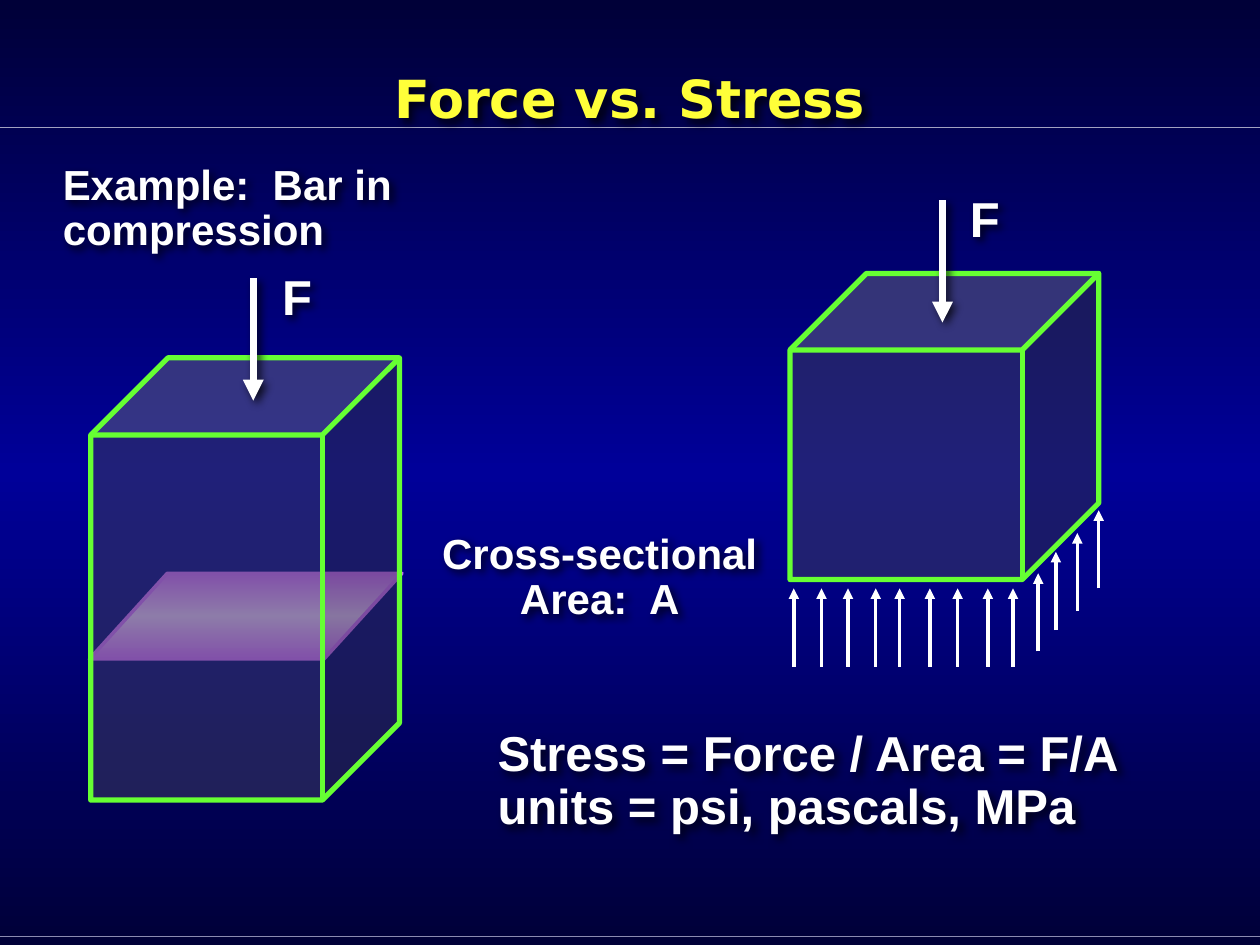
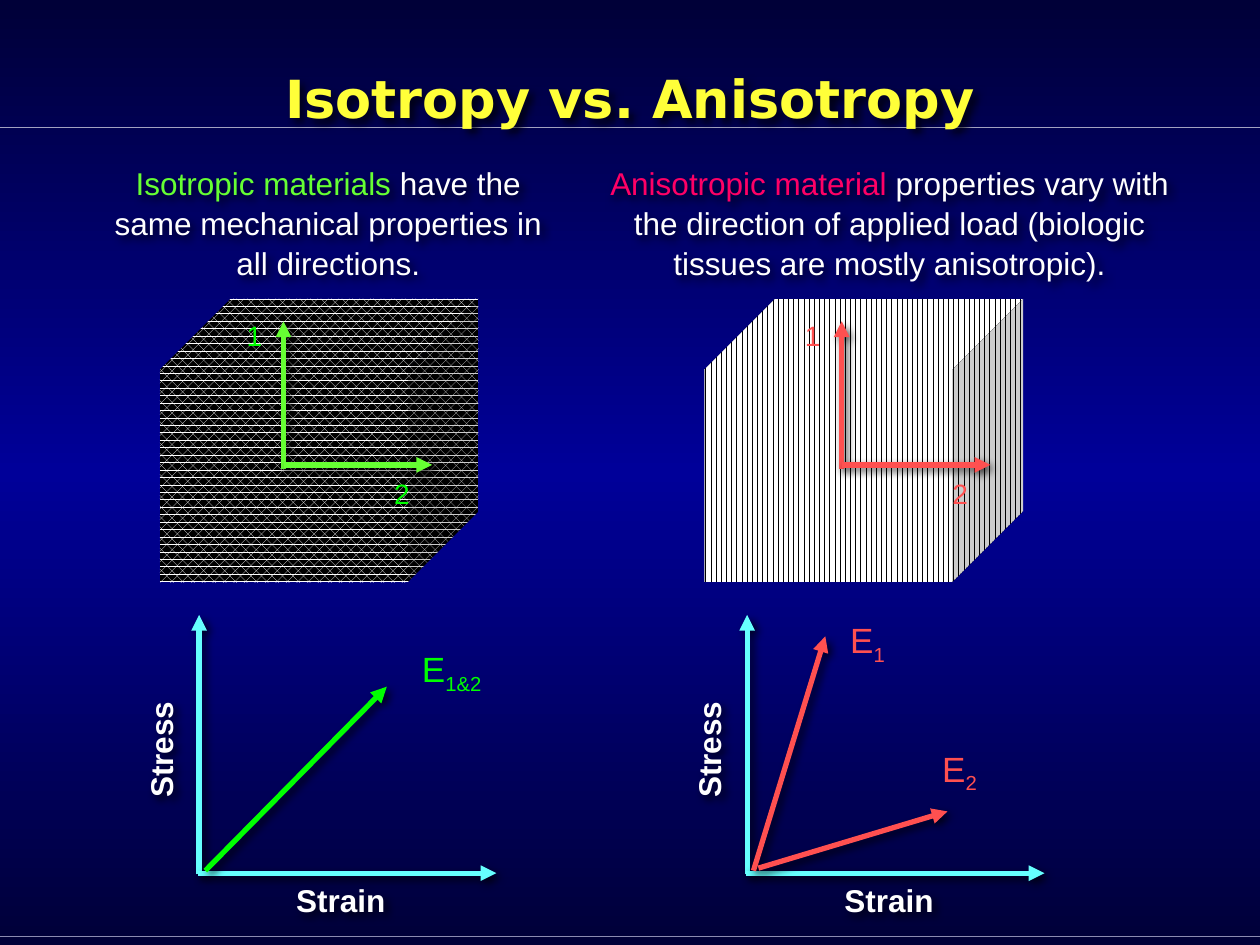
from lxml import etree
from pptx import Presentation
from pptx.dml import color
from pptx.enum import dml, shapes, text
from pptx.oxml import ns, parse_xml
from pptx.util import Inches, Pt

HUES = {
    "edge": "000038", "mid": "000099", "low": "8B8BB1", "rule": "A2A2C0",
    "title": "FFFF39", "white": "FFFFFF", "black": "000000",
    "glass": "3E3E5C", "lime": "66FF33", "green": "00FF00", "cyan": "66FFFF",
    "red": "FF5050", "pink": "FF0066", "plum": "CC66FF", "pale": "E5C0FF",
}
FONT, HEAD = "Arial", "DejaVu Sans"
SHAPE = shapes.MSO_SHAPE
LEFT, MID = text.PP_ALIGN.LEFT, text.PP_ALIGN.CENTER


def rgb(name):
    return color.RGBColor.from_string(HUES[name])


def node(parent, tag, **attrs):
    return etree.SubElement(parent, ns.qn(tag), attrs)


def blend(root, stops):
    """Replace the stops of the gradient under root and return the gradient."""
    grad = root.find(".//" + ns.qn("a:gradFill"))
    items = grad.find(ns.qn("a:gsLst"))
    for old in list(items):
        items.remove(old)
    for pos, name in stops:
        stop = node(items, "a:gs", pos=str(pos * 1000))
        node(stop, "a:srgbClr", val=HUES[name])
    return grad


def shade(item, on=True):
    """Give a shape the deck's soft shadow, or an empty effect list."""
    props = item.element.spPr
    for old in props.findall(ns.qn("a:effectLst")):
        props.remove(old)
    effects = node(props, "a:effectLst")
    if on:
        drop = node(effects, "a:outerShdw", blurRad=str(Pt(5)), dist=str(Pt(3)),
                    dir="2700000", algn="ctr", rotWithShape="0")
        ink = node(drop, "a:srgbClr", val=HUES["black"])
        node(ink, "a:alpha", val="75000")


class Deck:
    """Holds the shared style and the current slide."""

    def __init__(self):
        self.file = Presentation()
        self.file.slide_width, self.file.slide_height = Inches(10), Inches(7.5)
        master = self.file.slide_master
        fill = master.background.fill
        fill.gradient()
        fill.gradient_angle = 270
        blend(master.element, [(0, "edge"), (50, "mid"), (100, "edge")])

    def page(self, title):
        self.slide = self.file.slides.add_slide(self.file.slide_layouts[5])
        self.items = self.slide.shapes
        for y, hue in ((1.01, "rule"), (7.43, "low")):
            band = self.line((0, y), (10, y), hue, 0.75)
            self.items.element.insert(2, band.element)
        head = self.items.title
        head.left, head.top = Inches(0.5), Inches(0.15)
        head.width, head.height = Inches(9), Inches(1.25)
        frame = head.text_frame
        frame.text = title
        frame.vertical_anchor = text.MSO_ANCHOR.MIDDLE
        frame.auto_size = text.MSO_AUTO_SIZE.NONE
        frame.paragraphs[0].alignment = MID
        self.style(frame.paragraphs[0].runs[0], 30, "title", True, HEAD)
        shade(head)

    def style(self, run, size, hue, bold=False, face=FONT):
        font = run.font
        font.name, font.size, font.bold = face, Pt(size), bold
        font.color.rgb = rgb(hue)

    def line(self, start, end, hue, width):
        ends = [Inches(v) for v in (*start, *end)]
        item = self.items.add_connector(shapes.MSO_CONNECTOR.STRAIGHT, *ends)
        item.line.color.rgb = rgb(hue)
        item.line.width = Pt(width)
        shade(item, False)
        return item

    def arrow(self, start, end, hue, width=3, shadow=True):
        item = self.line(start, end, hue, width)
        node(item.line._get_or_add_ln(), "a:tailEnd", type="triangle")
        shade(item, shadow)

    def text(self, at, lines, size, bold=False, align=MID, gap=1.0,
             wrap=False, shadow=True, turn=0):
        """Each line is a list of (words, hue) or (words, hue, baseline)."""
        box = self.items.add_textbox(*[Inches(v) for v in at])
        box.rotation = turn
        frame = box.text_frame
        frame.word_wrap = wrap
        for i, parts in enumerate(lines):
            para = frame.add_paragraph() if i else frame.paragraphs[0]
            para.alignment, para.line_spacing = align, gap
            for words, hue, *base in parts:
                run = para.add_run()
                run.text = words
                self.style(run, size, hue, bold)
                if base:
                    run.font._element.set("baseline", str(base[0] * 1000))
        if shadow:
            shade(box)

    def bold(self, at, words, size, align=LEFT, wrap=False):
        lines = [[(row, "white")] for row in words]
        self.text(at, lines, size, True, align, 0.9, wrap)

    def form(self, kind, at, adj):
        item = self.items.add_shape(kind, *[Inches(v) for v in at])
        item.adjustments[0] = adj
        item.shadow.inherit = False
        return item

    def glass(self, at):
        cube = self.form(SHAPE.CUBE, at, 0.25)
        cube.fill.solid()
        cube.fill.fore_color.rgb = rgb("glass")
        ink = cube.element.spPr.find(".//" + ns.qn("a:srgbClr"))
        node(ink, "a:alpha", val="52000")
        cube.line.color.rgb = rgb("lime")
        cube.line.width = Pt(3)

    def grain(self, at, pattern):
        cube = self.form(SHAPE.CUBE, at, 0.25)
        cube.fill.patterned()
        cube.fill.pattern = pattern
        cube.fill.fore_color.rgb = rgb("white")
        cube.fill.back_color.rgb = rgb("black")
        cube.line.fill.background()

    def cut(self, at):
        """Draw the cross-section plane, palest at its centre."""
        plane = self.form(SHAPE.PARALLELOGRAM, at, 0.909)
        plane.fill.gradient()
        grad = blend(plane.element.spPr, [(0, "pale"), (100, "plum")])
        grad.remove(grad.find(ns.qn("a:lin")))
        route = node(grad, "a:path", path="shape")
        node(route, "a:fillToRect", l="50000", t="50000", r="50000", b="50000")
        plane.line.color.rgb = rgb("plum")
        plane.line.width = Pt(2)

    def force(self, x, y):
        self.arrow((x, y), (x, y + 0.97), "white", 4)

    def frame(self, x, y, hue, ink):
        """Draw material directions 1 and 2 from a corner."""
        self.arrow((x, y + 0.03), (x, y - 1.14), hue)
        self.arrow((x, y), (x + 1.18, y), hue)
        for name, dx, dy in (("1", -0.39, -1.21), ("2", 0.78, 0.04)):
            self.text((x + dx, y + dy, 0.32, 0.37), [[(name, ink)]], 16,
                      shadow=False)

    def plot(self, x, y=6.93):
        """Draw the stress and strain axes from their origin."""
        self.arrow((x, y + 0.01), (x, y - 2.05), "cyan")
        self.arrow((x - 0.01, y), (x + 2.36, y), "cyan")
        self.text((x + 0.67, y + 0.01, 0.91, 0.4), [[("Strain", "white")]], 18, True)
        self.text((x - 0.79, y - 1.18, 0.97, 0.4), [[("Stress", "white")]], 18, True,
                  turn=270)

    def slope(self, start, end, sub, at, hue):
        """Draw a modulus arrow and its label E with a subscript."""
        self.arrow(start, end, hue)
        self.text(at, [[("E", hue), (sub, hue, -25)]], 20, shadow=False)


def load(deck):
    deck.page("Force vs. Stress")
    deck.bold((0.4, 1.25, 3.2, 0.82), ["Example:  Bar in compression"], 24, wrap=True)
    deck.bold((2.14, 2.12, 0.44, 0.52), ["F"], 28)
    deck.bold((7.6, 1.5, 0.44, 0.52), ["F"], 28)
    deck.bold((3.41, 4.18, 2.7, 0.82), ["Cross-sectional", "Area:  A"], 24, MID)
    deck.bold((3.85, 5.74, 5.15, 0.94),
              ["Stress = Force / Area = F/A", "units = psi, pascals, MPa"], 28)
    deck.cut((0.71, 4.55, 2.48, 0.68))
    front = [(x, 4.67) for x in (6.3, 6.52, 6.73, 6.95, 7.14, 7.38, 7.6, 7.84, 8.04)]
    side = [(8.24, 4.55), (8.38, 4.38), (8.55, 4.23), (8.72, 4.05)]
    for x, y in front + side:
        deck.arrow((x, y + 0.62), (x, y), "white", 2, False)
    deck.glass((0.72, 2.84, 2.45, 3.51))
    deck.force(2.01, 2.21)
    deck.glass((6.27, 2.17, 2.45, 2.43))
    deck.force(7.48, 1.59)


def grains(deck):
    deck.page("Isotropy vs. Anisotropy")
    notes = (
        ((0.75, 1.24, 3.71, 1), "Isotropic materials ", "lime",
         "have the same mechanical properties in all directions."),
        ((4.56, 1.24, 5, 1), "Anisotropic material ", "pink",
         "properties vary with the direction of applied load "
         "(biologic tissues are mostly anisotropic)."),
    )
    for at, term, hue, rest in notes:
        deck.text(at, [[(term, hue), (rest, "white")]], 18, gap=1.05, wrap=True)
    fills = dml.MSO_PATTERN
    deck.grain((1.27, 2.37, 2.53, 2.25), fills.PERCENT_60)
    deck.grain((5.59, 2.37, 2.53, 2.25), fills.DARK_VERTICAL)
    deck.frame(2.25, 3.69, "lime", "green")
    deck.frame(6.68, 3.69, "red", "red")
    deck.plot(1.58)
    deck.plot(5.93)
    deck.slope((1.63, 6.91), (3.07, 5.45), "1&2", (3.23, 5.09, 0.71, 0.43), "green")
    deck.slope((5.98, 6.91), (6.55, 5.05), "1", (6.64, 4.86, 0.49, 0.43), "red")
    deck.slope((6.02, 6.89), (7.52, 6.44), "2", (7.37, 5.88, 0.49, 0.43), "red")


def main():
    deck = Deck()
    load(deck)
    grains(deck)
    deck.file.save("out.pptx")


if __name__ == "__main__":
    main()
